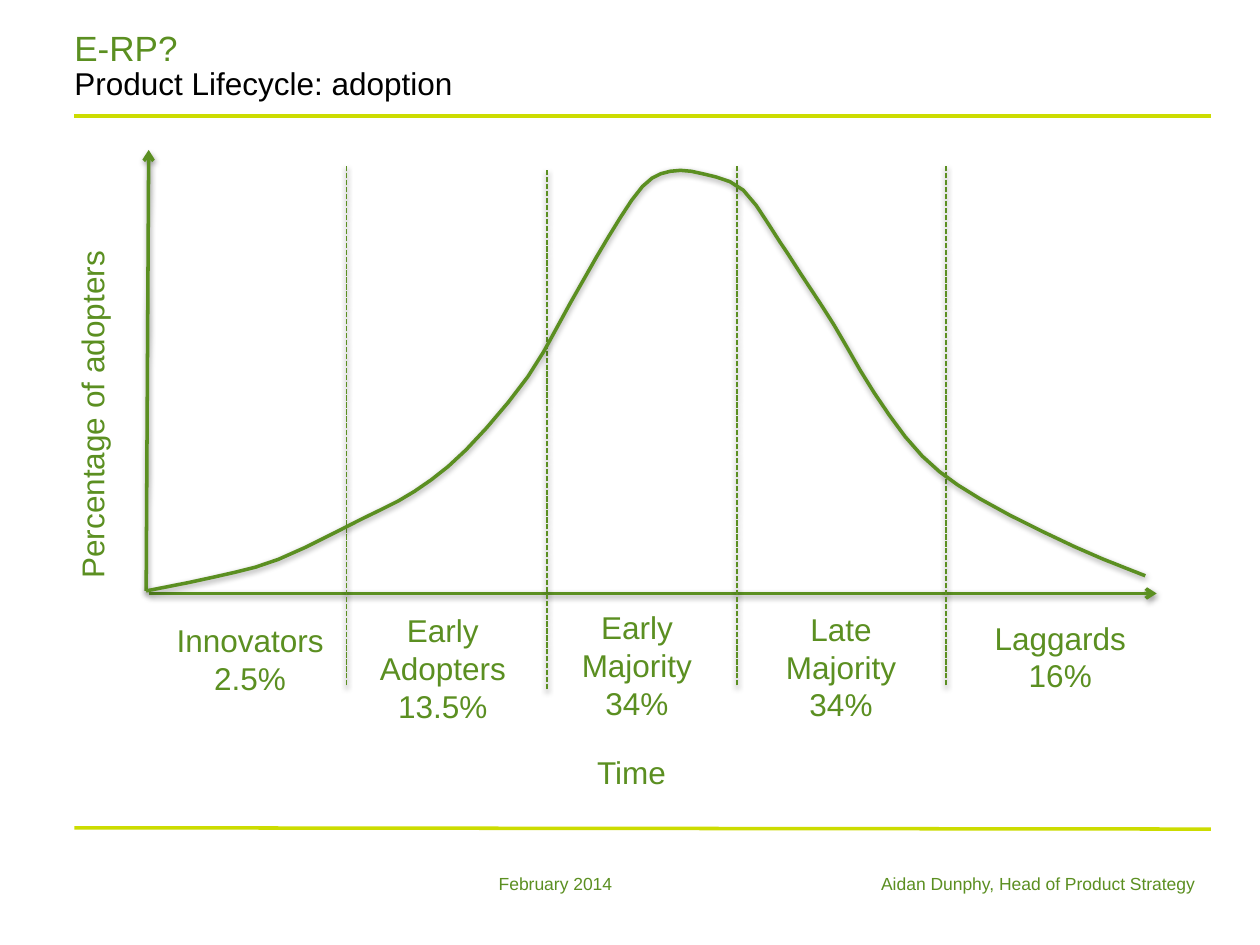
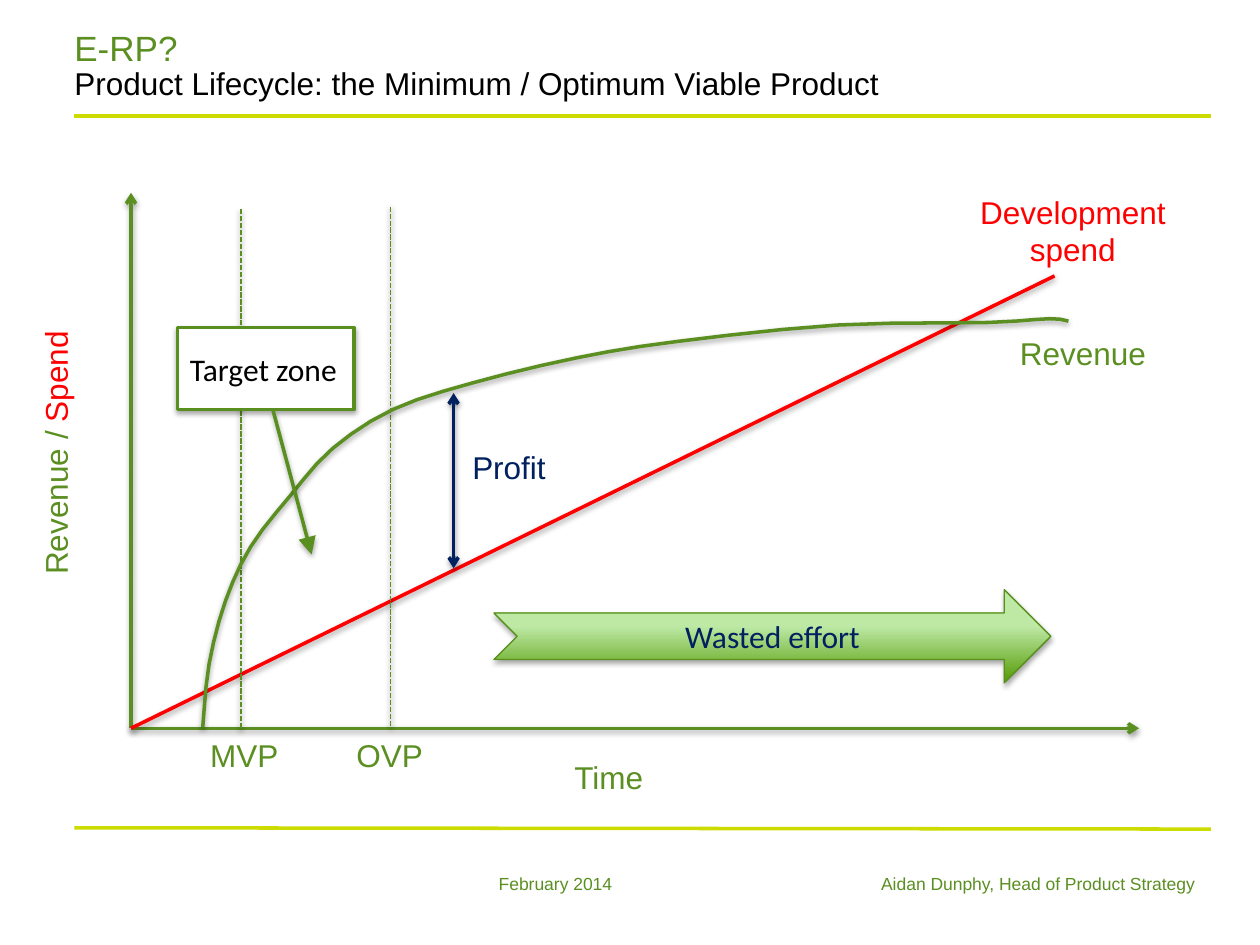
from dataclasses import dataclass
from typing import Any, Optional

from lxml import etree
from pptx import Presentation
from pptx import util as u
from pptx.dml.color import RGBColor
from pptx.enum import dml, shapes, text
from pptx.oxml.ns import qn

Point = tuple[float, float]
Box = tuple[float, float, float, float]


@dataclass(frozen=True)
class Theme:
    green: str = "5B8F21"
    outline: str = "598F1E"
    lime: str = "CCDC00"
    red: str = "FF0000"
    navy: str = "002060"
    black: str = "000000"
    white: str = "FFFFFF"
    arrow_dark: str = "5CA010"
    arrow_light: str = "BDE9A5"
    font: str = "Arial"
    shape_font: str = "Calibri"
    title_size: int = 20
    body_size: int = 18
    footer_size: int = 10


THEME = Theme()


@dataclass(frozen=True)
class Label:
    words: str
    box: Box
    colour: str = THEME.green
    size: int = THEME.body_size
    align: text.PP_ALIGN = text.PP_ALIGN.LEFT
    rotation: int = 0
    inset: bool = True
    tab: Optional[float] = None


@dataclass(frozen=True)
class Stroke:
    start: Point
    end: Point
    colour: str = THEME.green
    width: float = 2
    dashed: bool = False
    head: Optional[str] = None
    tail: Optional[str] = None
    shadow: bool = True


def set_values(target: Any, values: dict[str, Any]) -> None:
    for name, value in values.items():
        setattr(target, name, value)


def style_line(line: Any, colour: str, width: float) -> None:
    line.color.rgb = RGBColor.from_string(colour)
    line.width = u.Pt(width)


def add_arrowhead(shape: Any, end: str, kind: str, size: str = "med") -> None:
    line = shape._element.spPr.find(qn("a:ln"))
    etree.SubElement(line, qn(f"a:{end}End"), type=kind, w=size, len=size)


def add_shadow(shape: Any, opacity: int = 38) -> None:
    effects = shape._element.spPr.find(qn("a:effectLst"))
    shadow = etree.SubElement(
        effects, qn("a:outerShdw"), blurRad=str(u.Pt(3.1)), dist=str(u.Pt(1.6)),
        dir="5400000", rotWithShape="0")
    colour = etree.SubElement(shadow, qn("a:srgbClr"), val=THEME.black)
    etree.SubElement(colour, qn("a:alpha"), val=str(opacity * 1000))


def add_tab(paragraph: Any, position: float) -> None:
    tabs = etree.SubElement(paragraph._p.get_or_add_pPr(), qn("a:tabLst"))
    etree.SubElement(tabs, qn("a:tab"), pos=str(u.Inches(position)), algn="l")


def add_run(paragraph: Any, words: str, colour: str, size: int, font: str = THEME.font) -> None:
    run = paragraph.add_run()
    run.text = words
    set_values(run.font, {"name": font, "size": u.Pt(size)})
    run.font.color.rgb = RGBColor.from_string(colour)


def add_label(slide: Any, label: Label) -> Any:
    shape = slide.shapes.add_textbox(*map(u.Inches, label.box))
    shape.rotation = label.rotation
    frame = shape.text_frame
    frame.word_wrap = True
    if not label.inset:
        sides = ("left", "top", "right", "bottom")
        set_values(frame, {f"margin_{side}": 0 for side in sides})
    for index, words in enumerate(label.words.split("\n")):
        paragraph = frame.add_paragraph() if index else frame.paragraphs[0]
        paragraph.alignment = label.align
        if label.tab:
            add_tab(paragraph, label.tab)
        add_run(paragraph, words, label.colour, label.size)
    return shape


def add_stroke(slide: Any, stroke: Stroke) -> None:
    connector = slide.shapes.add_connector(
        shapes.MSO_CONNECTOR.STRAIGHT, *map(u.Inches, stroke.start + stroke.end))
    style_line(connector.line, stroke.colour, stroke.width)
    if stroke.dashed:
        connector.line.dash_style = dml.MSO_LINE.SQUARE_DOT
    for end, kind in (("head", stroke.head), ("tail", stroke.tail)):
        if kind:
            add_arrowhead(connector, end, kind)
    etree.SubElement(connector._element.spPr, qn("a:effectLst"))
    if stroke.shadow:
        add_shadow(connector)


def smooth_points(knots: list[Point], steps: int = 3) -> list[Point]:
    padded = [knots[0], *knots, knots[-1]]
    points = [knots[0]]
    for before, start, end, after in zip(padded, padded[1:], padded[2:], padded[3:]):
        for step in range(1, steps + 1):
            t = step / steps
            points.append(tuple(
                (2 * b + (c - a) * t + (2 * a - 5 * b + 4 * c - d) * t ** 2
                 + (3 * b - a - 3 * c + d) * t ** 3) / 2
                for a, b, c, d in zip(before, start, end, after)))
    return points


def add_curve(slide: Any, knots: list[Point]) -> None:
    points = [(u.Inches(x), u.Inches(y)) for x, y in smooth_points(knots)]
    builder = slide.shapes.build_freeform(*points[0])
    builder.add_line_segments(points[1:], close=False)
    curve = builder.convert_to_shape()
    curve.fill.background()
    style_line(curve.line, THEME.green, 2)
    curve.shadow.inherit = False
    add_shadow(curve)


def add_block(slide: Any, kind: shapes.MSO_SHAPE, box: Box, words: str, colour: str,
              line_width: float, align: text.PP_ALIGN) -> Any:
    shape = slide.shapes.add_shape(kind, *map(u.Inches, box))
    style_line(shape.line, THEME.outline, line_width)
    shape.shadow.inherit = False
    add_shadow(shape, 35)
    set_values(shape.text_frame, {"word_wrap": True, "vertical_anchor": text.MSO_ANCHOR.MIDDLE})
    paragraph = shape.text_frame.paragraphs[0]
    paragraph.alignment = align
    add_run(paragraph, words, colour, THEME.body_size, THEME.shape_font)
    return shape


def add_page(presentation: Any, subtitle: str) -> Any:
    slide = presentation.slides.add_slide(presentation.slide_layouts[6])
    for start, end in (((0.59, 0.92), (9.61, 0.92)), ((0.59, 6.57), (9.61, 6.58))):
        add_stroke(slide, Stroke(start, end, THEME.lime, shadow=False))
    for label in (
        Label("E-RP?", (0.59, 0.21, 7.74, 0.46), size=THEME.title_size, inset=False),
        Label(subtitle, (0.59, 0.51, 8.99, 0.5), THEME.black, inset=False),
        Label("February 2014", (3.86, 6.88, 2.16, 0.25), size=THEME.footer_size),
        Label("Aidan Dunphy, Head of Product Strategy", (6.34, 6.88, 3.24, 0.25),
              size=THEME.footer_size, align=text.PP_ALIGN.RIGHT),
    ):
        add_label(slide, label)
    return slide


def add_divider(slide: Any, x: float, bottom: float) -> None:
    add_stroke(slide, Stroke((x, bottom), (x, bottom - 4.13), width=1, dashed=True))


def build_adoption(presentation: Any) -> None:
    slide = add_page(presentation, "Product Lifecycle: adoption")
    add_stroke(slide, Stroke((1.16, 4.69), (1.18, 1.19), tail="arrow"))
    add_stroke(slide, Stroke((1.18, 4.71), (9.18, 4.71), tail="arrow"))
    for x, bottom in ((2.75, 5.44), (4.34, 5.47), (5.85, 5.44)):
        add_divider(slide, x, bottom)
    add_label(slide, Label("Percentage of adopters", (-0.77, 2.99, 3, 0.4), rotation=270))
    add_label(slide, Label("Time", (4.64, 5.93, 1.67, 0.4)))
    center = text.PP_ALIGN.CENTER
    add_label(slide, Label("Innovators\n2.5%", (1.22, 4.88, 1.53, 0.71), align=center))
    add_divider(slide, 7.51, 5.44)
    for words, left, top, height in (
        ("Early Adopters\n13.5%", 2.75, 4.8, 1.01),
        ("Early Majority\n34%", 4.29, 4.78, 1.01),
        ("Late Majority\n34%", 5.91, 4.79, 1.01),
        ("Laggards\n16%", 7.65, 4.86, 0.71),
    ):
        add_label(slide, Label(words, (left, top, 1.53, height), align=center))
    add_curve(slide, [
        (1.16, 4.69), (1.7, 4.58), (2.21, 4.44), (2.87, 4.12), (3.29, 3.9), (3.7, 3.57),
        (4.19, 2.99), (4.53, 2.4), (4.83, 1.88), (5.1, 1.48), (5.32, 1.36), (5.58, 1.38),
        (5.9, 1.51), (6.19, 1.92), (6.36, 2.18), (6.62, 2.58), (6.94, 3.12), (7.32, 3.62),
        (7.78, 3.96), (8.53, 4.34), (9.09, 4.57)])


def build_viable_product(presentation: Any) -> None:
    slide = add_page(presentation, "Product Lifecycle: the Minimum / Optimum Viable Product")
    origin = (1.04, 5.78)
    add_stroke(slide, Stroke(origin, (1.04, 1.53), tail="arrow"))
    add_stroke(slide, Stroke(origin, (9.04, 5.78), tail="arrow"))
    axis_title = add_label(slide, Label("Revenue / ", (-0.47, 3.24, 2.13, 0.71), rotation=270))
    add_run(axis_title.text_frame.paragraphs[0], "Spend", THEME.red, THEME.body_size)
    center = text.PP_ALIGN.CENTER
    add_label(slide, Label("Time", (4.46, 5.97, 1.67, 0.4)))
    add_label(slide, Label("MVP\tOVP", (1.57, 5.79, 2.03, 0.4), tab=1.16))
    add_stroke(slide, Stroke(origin, (8.37, 2.19), THEME.red))
    add_label(slide, Label("Development spend", (7.65, 1.48, 1.73, 0.71), THEME.red, align=center))
    add_label(slide, Label("Revenue", (7.73, 2.6, 1.73, 0.4), align=center))
    add_divider(slide, 1.91, 5.78)
    add_divider(slide, 3.1, 5.76)
    add_curve(slide, [
        (1.61, 5.77), (1.66, 5.27), (1.79, 4.77), (1.99, 4.34), (2.3, 3.94), (2.64, 3.56),
        (3.12, 3.25), (3.75, 3.04), (4.58, 2.84), (5.38, 2.71), (6.65, 2.58), (7.84, 2.56),
        (8.33, 2.53), (8.48, 2.55)])
    add_stroke(slide, Stroke((3.6, 3.12), (3.6, 4.51), THEME.navy, head="arrow", tail="arrow"))
    add_label(slide, Label("Profit", (3.65, 3.51, 1.73, 0.4), THEME.navy))

    wasted_effort = add_block(slide, shapes.MSO_SHAPE.NOTCHED_RIGHT_ARROW,
                              (3.92, 4.68, 4.42, 0.74), "Wasted effort", THEME.navy, 0.75, center)
    wasted_effort.fill.gradient()
    wasted_effort.fill.gradient_angle = 90
    stops = ((0.05, THEME.arrow_dark), (0.61, THEME.arrow_light))
    for stop, (position, colour) in zip(wasted_effort.fill.gradient_stops, stops):
        stop.position = position
        stop.color.rgb = RGBColor.from_string(colour)

    target_zone = add_block(slide, shapes.MSO_SHAPE.LINE_CALLOUT_1, (1.41, 2.6, 1.4, 0.65),
                            "Target zone", THEME.black, 2, text.PP_ALIGN.LEFT)
    target_zone.fill.solid()
    target_zone.fill.fore_color.rgb = RGBColor.from_string(THEME.white)
    for index, value in enumerate((1, 0.54, 2.77, 0.76)):
        target_zone.adjustments[index] = value
    add_arrowhead(target_zone, "tail", "triangle", "lg")


def main() -> None:
    presentation = Presentation()
    set_values(presentation, {"slide_width": u.Inches(10), "slide_height": u.Inches(7.5)})
    build_adoption(presentation)
    build_viable_product(presentation)
    presentation.save("out.pptx")


if __name__ == "__main__":
    main()
